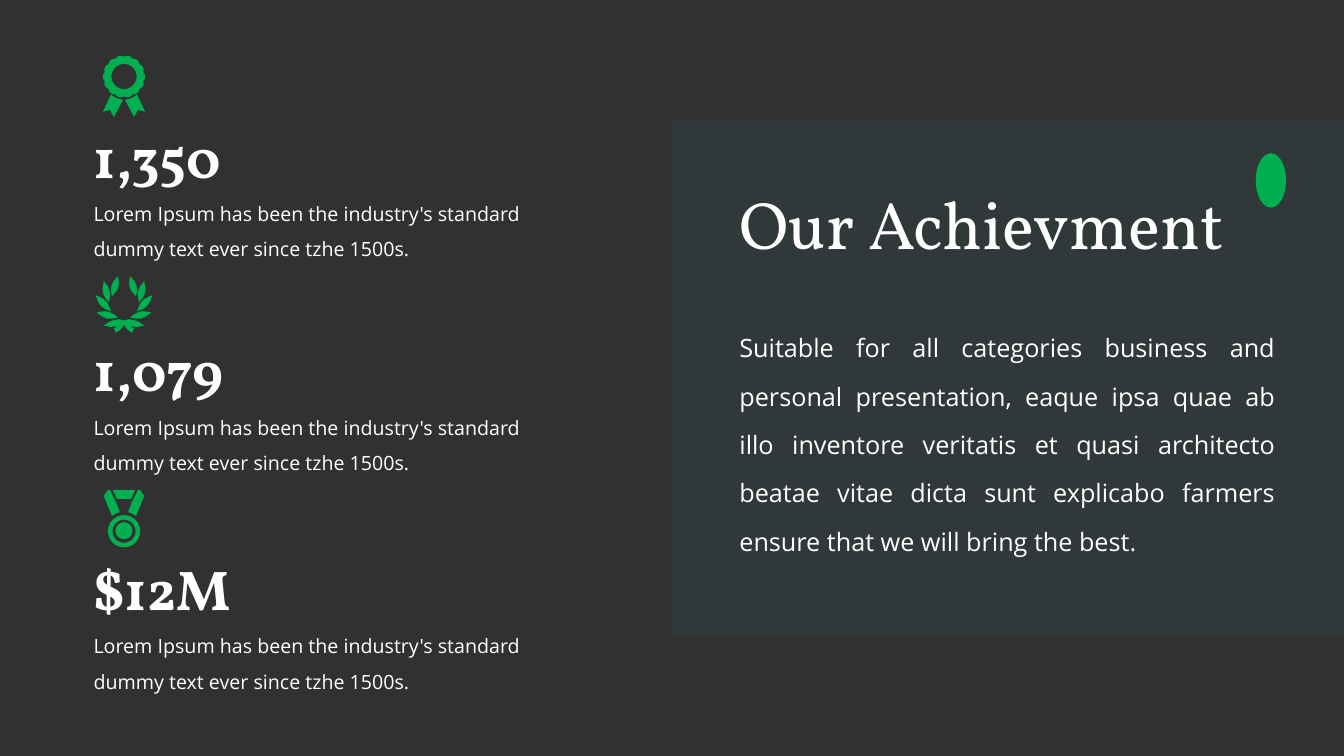
import math
from dataclasses import dataclass

import pptx
import pptx.dml.color
import pptx.enum.shapes
import pptx.enum.text
import pptx.oxml
import pptx.oxml.ns
import pptx.util

COLUMNS, ROWS = 1333, 750
CELL = pptx.util.Inches(7.5) // ROWS
SHAPES = pptx.enum.shapes.MSO_SHAPE
ALIGN = pptx.enum.text.PP_ALIGN
ANCHOR = pptx.enum.text.MSO_ANCHOR


@dataclass(frozen=True)
class Theme:
    background: str = "313131"
    panel: str = "313C3F"
    accent: str = "00B050"
    text: str = "FFFFFF"
    heading_font: str = "Vollkorn"
    body_font: str = "Open Sans"
    title_size: int = 48
    figure_size: int = 40
    body_size: int = 18
    caption_size: int = 14


@dataclass(frozen=True)
class Box:
    """Place on the page in grid cells."""
    left: float
    top: float
    width: float
    height: float

    def inner(self, left, top, width, height):
        return Box(self.left + left, self.top + top, width, height)

    def emu(self):
        return [round(n * CELL) for n in (self.left, self.top, self.width, self.height)]


THEME = Theme()
CAPTION = "Lorem Ipsum has been the industry's standard dummy text ever since tzhe 1500s."


def paint(shape, color):
    shape.shadow.inherit = False
    shape.fill.solid()
    shape.fill.fore_color.rgb = pptx.dml.color.RGBColor.from_string(color)
    shape.line.fill.background()
    return shape


def add_block(page, kind, box, color=THEME.accent):
    return paint(page.shapes.add_shape(kind, *box.emu()), color)


def add_outline(page, box, *contours):
    """Draw closed contours whose origin is the top centre of the box."""
    center = box.left + box.width / 2
    placed = [[(round((center + x) * CELL), round((box.top + y) * CELL))
               for x, y in contour] for contour in contours]
    builder = page.shapes.build_freeform(*placed[0][0])
    builder.add_line_segments(placed[0][1:], close=True)
    for contour in placed[1:]:
        builder.move_to(*contour[0])
        builder.add_line_segments(contour[1:], close=True)
    return paint(builder.convert_to_shape(), THEME.accent)


def add_text(page, box, text, font, size, bold=False, spacing=1.0,
             align=ALIGN.LEFT, anchor=ANCHOR.MIDDLE):
    frame = page.shapes.add_textbox(*box.emu()).text_frame
    frame.word_wrap = True
    frame.vertical_anchor = anchor
    para = frame.paragraphs[0]
    para.alignment = align
    para.line_spacing = spacing
    span = para.add_run()
    span.text = text
    span.font.name = font
    span.font.size = pptx.util.Pt(size)
    span.font.bold = bold
    span.font.color.rgb = pptx.dml.color.RGBColor.from_string(THEME.text)


def mirror(points):
    return [(-x, y) for x, y in reversed(points)]


def leaf(base, tip, half_width=3.4, steps=10):
    """Almond outline from base to tip."""
    dx, dy = tip[0] - base[0], tip[1] - base[1]
    length = math.hypot(dx, dy)

    def side(sign):
        for step in range(steps):
            share = step / steps
            bulge = sign * half_width * math.sin(math.pi * share) / length
            yield base[0] + dx * share - dy * bulge, base[1] + dy * share + dx * bulge

    return [*side(1), tip, *reversed(list(side(-1))[1:])]


def draw_rosette(page, box):
    tail = [(6, 43), (1, 44), (10, 61), (14, 54), (21, 56), (13, 39)]
    for ribbon in (mirror(tail), tail):
        add_outline(page, box, ribbon)
    lobes, steps, middle, hole = 14, 140, 21, 12.5
    angles = [2 * math.pi * step / steps for step in range(steps)]
    rim = []
    for angle in angles:
        radius = 19.6 + 1.4 * abs(math.cos(lobes / 2 * angle))
        rim.append((radius * math.cos(angle), middle + radius * math.sin(angle)))
    opening = [(hole * math.cos(a), middle + hole * math.sin(a)) for a in reversed(angles)]
    add_outline(page, box, rim, opening)


def draw_laurel(page, box):
    branch = [((6, 41), (27, 36)), ((13, 35), (28, 19)),
              ((15, 26), (20, 5)), ((12, 20), (6, 0))]
    for base, tip in branch:
        blade = leaf(base, tip)
        for outline in (mirror(blade), blade):
            add_outline(page, box, outline)
    bow = [(0, 44), (5, 42.7), (10, 43.5), (15, 45.5), (20, 49), (14, 50.4), (8, 50),
           (6, 49), (7.5, 50.5), (10, 52), (8, 56), (4, 53.5), (1, 50), (0, 48)]
    add_outline(page, box, bow + mirror(bow)[1:-1])


def draw_medal(page, box):
    center = box.width / 2
    add_block(page, SHAPES.OVAL, box.inner(center - 8.5, 32, 17, 17))
    ring = add_block(page, SHAPES.DONUT, box.inner(center - 16, 25, 32, 32))
    ring.adjustments[0] = 0.14
    strap = [(4, 22), (8, 23.5), (12, 26), (20, 6), (16, 0), (14, 0), (8, 12)]
    clasp = [(-11, 0), (11, 0), (7, 9), (-7, 9)]
    for outline in (mirror(strap), strap, clasp):
        add_outline(page, box, outline)


def achievement(page, box, draw_icon, icon_rise, figure):
    """Icon above a large figure and its caption."""
    draw_icon(page, box.inner(12, -icon_rise, 56, icon_rise))
    add_text(page, box.inner(0, 0, 202, 77), figure,
             THEME.heading_font, THEME.figure_size, bold=True)
    add_text(page, box.inner(0, 69, box.width, 77), CAPTION,
             THEME.body_font, THEME.caption_size, spacing=1.5)


def summary_panel(page, box):
    panel = add_block(page, SHAPES.RECTANGLE, box, THEME.panel)
    color = panel.fill._xPr.find(".//" + pptx.oxml.ns.qn("a:srgbClr"))
    color.append(pptx.oxml.parse_xml(
        '<a:alpha xmlns:a="http://schemas.openxmlformats.org/drawingml/2006/main" val="70000"/>'))
    add_text(page, box.inner(57, 187, 551, 272),
             "Suitable for all categories business and personal presentation, eaque ipsa "
             "quae ab illo inventore veritatis et quasi architecto beatae vitae dicta sunt "
             "explicabo farmers ensure that we will bring the best.",
             THEME.body_font, THEME.body_size, spacing=1.6,
             align=ALIGN.JUSTIFY, anchor=ANCHOR.TOP)
    add_text(page, box.inner(57, 56, 592, 100), "Our Achievment",
             THEME.heading_font, THEME.title_size, spacing=0.9)
    add_block(page, SHAPES.OVAL, box.inner(579, 32, 30, 54))


def main():
    deck = pptx.Presentation()
    deck.slide_width, deck.slide_height = COLUMNS * CELL, ROWS * CELL
    page = deck.slides.add_slide(deck.slide_layouts[6])
    page.background.fill.solid()
    page.background.fill.fore_color.rgb = pptx.dml.color.RGBColor.from_string(THEME.background)

    summary_panel(page, Box(COLUMNS / 2, 120, COLUMNS / 2, 511))
    for top, draw_icon, icon_rise, figure in (
            (116, draw_rosette, 61, "1,350"),
            (328, draw_laurel, 54, "1,079"),
            (545, draw_medal, 59, "$12M")):
        achievement(page, Box(83, top, 454, 146), draw_icon, icon_rise, figure)
    deck.save("out.pptx")


if __name__ == "__main__":
    main()
